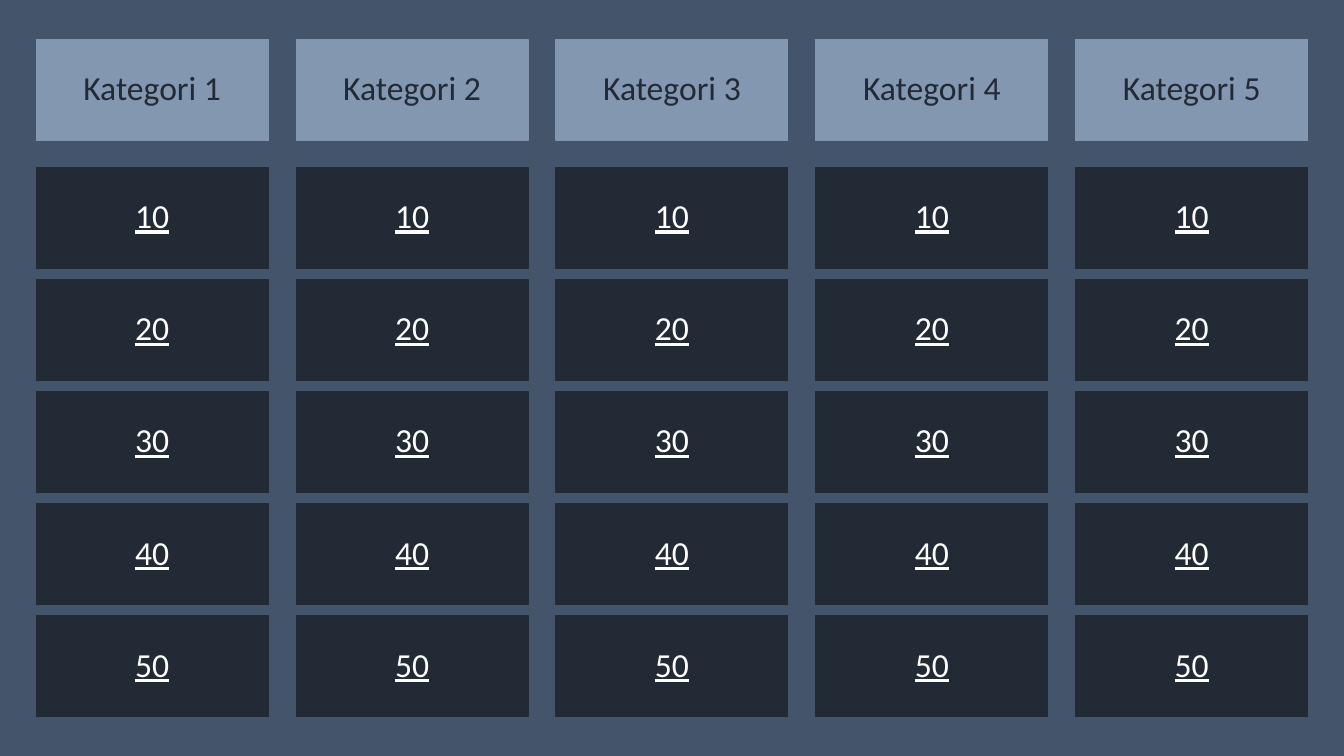
from pptx import Presentation
from pptx.dml.color import RGBColor
from pptx.enum import shapes, text
from pptx.util import Inches, Pt

CATEGORIES = ["Kategori 1", "Kategori 2", "Kategori 3", "Kategori 4", "Kategori 5"]
POINTS = ["10", "20", "30", "40", "50"]

BACKGROUND, HEADER, DARK, WHITE = "44546A", "8497B0", "222A35", "FFFFFF"
FONT = "Calibri"

TILE_WIDTH, TILE_HEIGHT = 2.3, 1
FIRST_LEFT, LAST_LEFT = 0.36, 10.67
HEADER_TOP, FIRST_TOP, LAST_TOP = 0.39, 1.66, 6.11
COLUMN_STEP = (LAST_LEFT - FIRST_LEFT) / (len(CATEGORIES) - 1)
ROW_STEP = (LAST_TOP - FIRST_TOP) / (len(POINTS) - 1)


def paint(color_format, color):
    color_format.rgb = RGBColor.from_string(color)


def add_tile(slide, label, left, top, fill, color, underline=False):
    shape = slide.shapes.add_shape(
        shapes.MSO_SHAPE.RECTANGLE,
        Inches(left), Inches(top), Inches(TILE_WIDTH), Inches(TILE_HEIGHT),
    )
    shape.shadow.inherit = False
    shape.fill.solid()
    paint(shape.fill.fore_color, fill)
    paint(shape.line.color, fill)
    shape.line.width = Pt(0.75)

    frame = shape.text_frame
    frame.word_wrap = True
    frame.vertical_anchor = text.MSO_ANCHOR.MIDDLE
    paragraph = frame.paragraphs[0]
    paragraph.alignment = text.PP_ALIGN.CENTER
    paragraph.line_spacing = 0.9
    run = paragraph.add_run()
    run.text = label
    run.font.name = FONT
    run.font.size = Pt(24)
    run.font.underline = underline
    paint(run.font.color, color)


def main():
    presentation = Presentation()
    presentation.slide_width = Inches(13.33)
    presentation.slide_height = Inches(7.5)
    slide = presentation.slides.add_slide(presentation.slide_layouts[6])
    slide.background.fill.solid()
    paint(slide.background.fill.fore_color, BACKGROUND)

    for column, category in enumerate(CATEGORIES):
        left = FIRST_LEFT + column * COLUMN_STEP
        add_tile(slide, category, left, HEADER_TOP, HEADER, DARK)
        for row, points in enumerate(POINTS):
            top = FIRST_TOP + row * ROW_STEP
            add_tile(slide, points, left, top, DARK, WHITE, underline=True)

    presentation.save("out.pptx")


if __name__ == "__main__":
    main()
